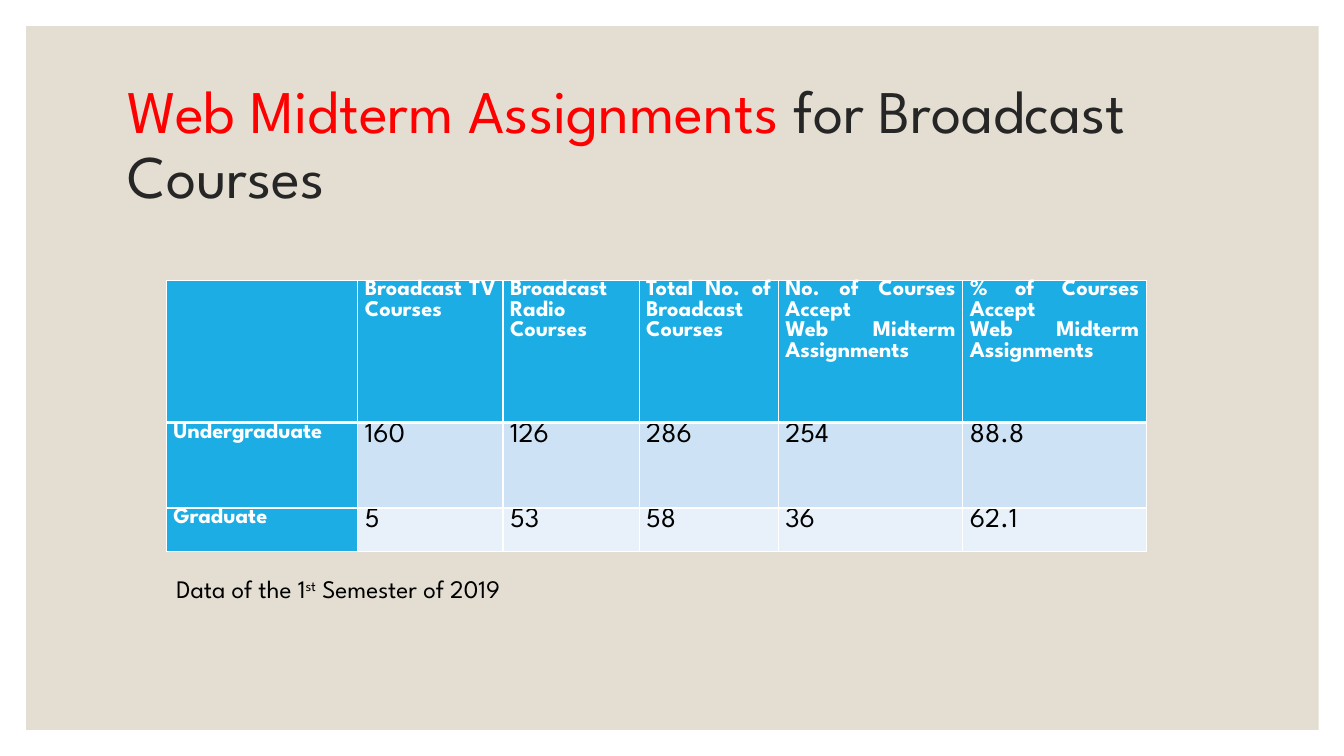
"""Build a slide with a table of web midterm assignments for broadcast courses."""
from lxml import etree
from pptx import Presentation, util as u
from pptx.dml.color import RGBColor
from pptx.enum import shapes, text
from pptx.oxml import ns

COLORS = {
    "white": "FFFFFF", "panel": "E3DED1", "red": "FF0000", "ink": "262626",
    "black": "000000", "header": "1CADE4", "band": "CDE3F5", "light": "E8F1FA",
}
FONT = "League Spartan"
WIDTH, HEIGHT = u.Inches(13.33), u.Inches(7.5)
COLUMN_SHARES = [14.25, 10.8, 10.13, 10.35, 13.73, 13.65]
ROW_SHARES = [18.8, 11.33, 5.73]
ROW_FILLS = ["header", "band", "light"]
COURSES = [
    ["", "Broadcast TV Courses", "Broadcast Radio Courses",
     "Total No. of Broadcast Courses",
     "No. of Courses Accept\nWeb Midterm Assignments",
     "% of Courses Accept\nWeb Midterm Assignments"],
    ["Undergraduate", "160", "126", "286", "254", "88.8"],
    ["Graduate", "5", "53", "58", "36", "62.1"],
]


def across(share):
    """Turn a percentage of the slide's width into a length."""
    return round(WIDTH * share / 100)


def down(share):
    """Turn a percentage of the slide's height into a length."""
    return round(HEIGHT * share / 100)


def area(left, top, width, height):
    """Turn percentages into a left, top, width and height."""
    return across(left), down(top), across(width), down(height)


def add_span(para, words, *, size, color, bold=False, raised=0):
    """Add formatted text to a paragraph, raised by a percentage."""
    span = para.add_run()
    span.text = words
    span.font.name = FONT
    span.font.size = u.Pt(size)
    span.font.bold = bold
    span.font.color.rgb = RGBColor.from_string(COLORS[color])
    if raised:
        span.font._element.set("baseline", str(raised * 1000))


def add_panel(page, place):
    """Add the plain background panel."""
    panel = page.shapes.add_shape(shapes.MSO_SHAPE.RECTANGLE, *place)
    panel.shadow.inherit = False
    panel.fill.solid()
    panel.fill.fore_color.rgb = RGBColor.from_string(COLORS["panel"])
    panel.line.fill.background()


def add_box(page, place, anchor=text.MSO_ANCHOR.TOP):
    """Add a wrapping text box and return its first paragraph."""
    frame = page.shapes.add_textbox(*place).text_frame
    frame.word_wrap = True
    frame.vertical_anchor = anchor
    return frame.paragraphs[0]


def add_border(cell, side, points):
    """Draw one white border of a cell."""
    line = etree.SubElement(cell._tc.get_or_add_tcPr(), ns.qn(f"a:ln{side}"),
                            w=str(u.Pt(points)))
    fill = etree.SubElement(line, ns.qn("a:solidFill"))
    etree.SubElement(fill, ns.qn("a:srgbClr"), val=COLORS["white"])


def fill_cell(cell, words, *, fill, heading, borders):
    """Give a cell its borders, fill and justified text."""
    for side, points in borders.items():
        add_border(cell, side, points)
    cell.fill.solid()
    cell.fill.fore_color.rgb = RGBColor.from_string(COLORS[fill])
    cell.margin_left = cell.margin_right = u.Inches(0.07)
    cell.margin_top = cell.margin_bottom = 0
    for index, line in enumerate(words.split("\n") if words else []):
        frame = cell.text_frame
        para = frame.add_paragraph() if index else frame.paragraphs[0]
        para.alignment = text.PP_ALIGN.JUSTIFY
        add_span(para, line, size=16 if heading else 20,
                 color="white" if heading else "black", bold=heading)


def add_courses_table(page, left, top):
    """Add the table of courses with header row and header column."""
    place = area(left, top, sum(COLUMN_SHARES), sum(ROW_SHARES))
    table = page.shapes.add_table(len(COURSES), len(COLUMN_SHARES), *place).table
    for column, share in zip(table.columns, COLUMN_SHARES):
        column.width = across(share)
    for row, share in zip(table.rows, ROW_SHARES):
        row.height = down(share)
    for y, values in enumerate(COURSES):
        borders = {"L": 1, "R": 1, "T": 3 if y == 1 else 1, "B": 3 if y == 0 else 1}
        for x, words in enumerate(values):
            fill_cell(table.cell(y, x), words, heading=x == 0 or y == 0,
                      fill="header" if x == 0 else ROW_FILLS[y], borders=borders)


def main():
    """Build and save the deck."""
    deck = Presentation()
    deck.slide_width, deck.slide_height = WIDTH, HEIGHT
    page = deck.slides.add_slide(deck.slide_layouts[6])
    add_panel(page, area(1.95, 3.47, 96.17, 93.07))

    title = add_box(page, area(8.78, 9.33, 82.52, 20), text.MSO_ANCHOR.MIDDLE)
    title.line_spacing = 0.9
    add_span(title, "Web Midterm Assignments", size=43.2, color="red")
    add_span(title, " for Broadcast Courses", size=43.2, color="ink")

    add_courses_table(page, 12.38, 37.07)

    caption = add_box(page, area(12.38, 75.2, 45.76, 5.33))
    for words, raised in [("Data of the 1", 0), ("st", 30), (" Semester of 2019", 0)]:
        add_span(caption, words, size=18, color="black", raised=raised)
    deck.save("out.pptx")


if __name__ == "__main__":
    main()
